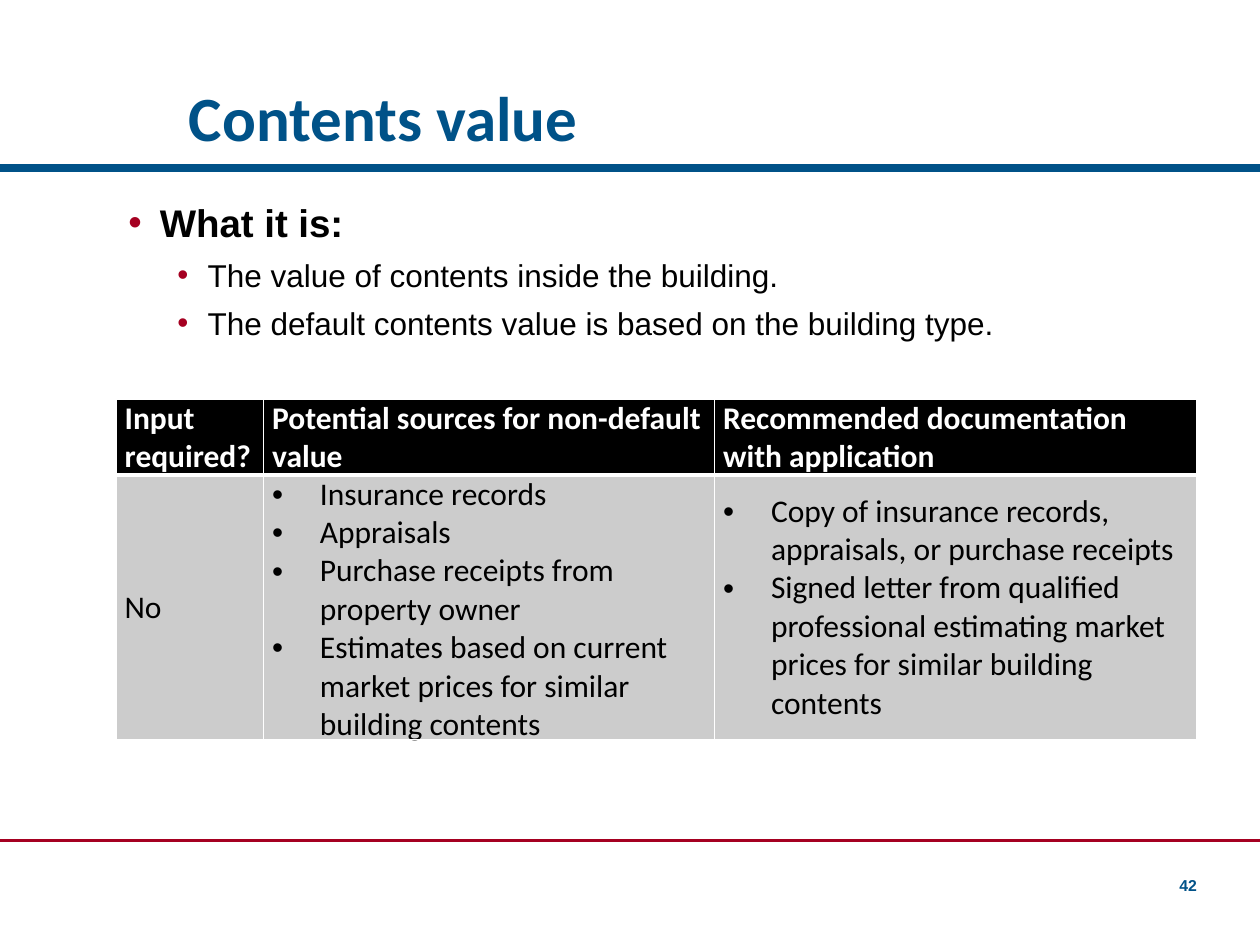
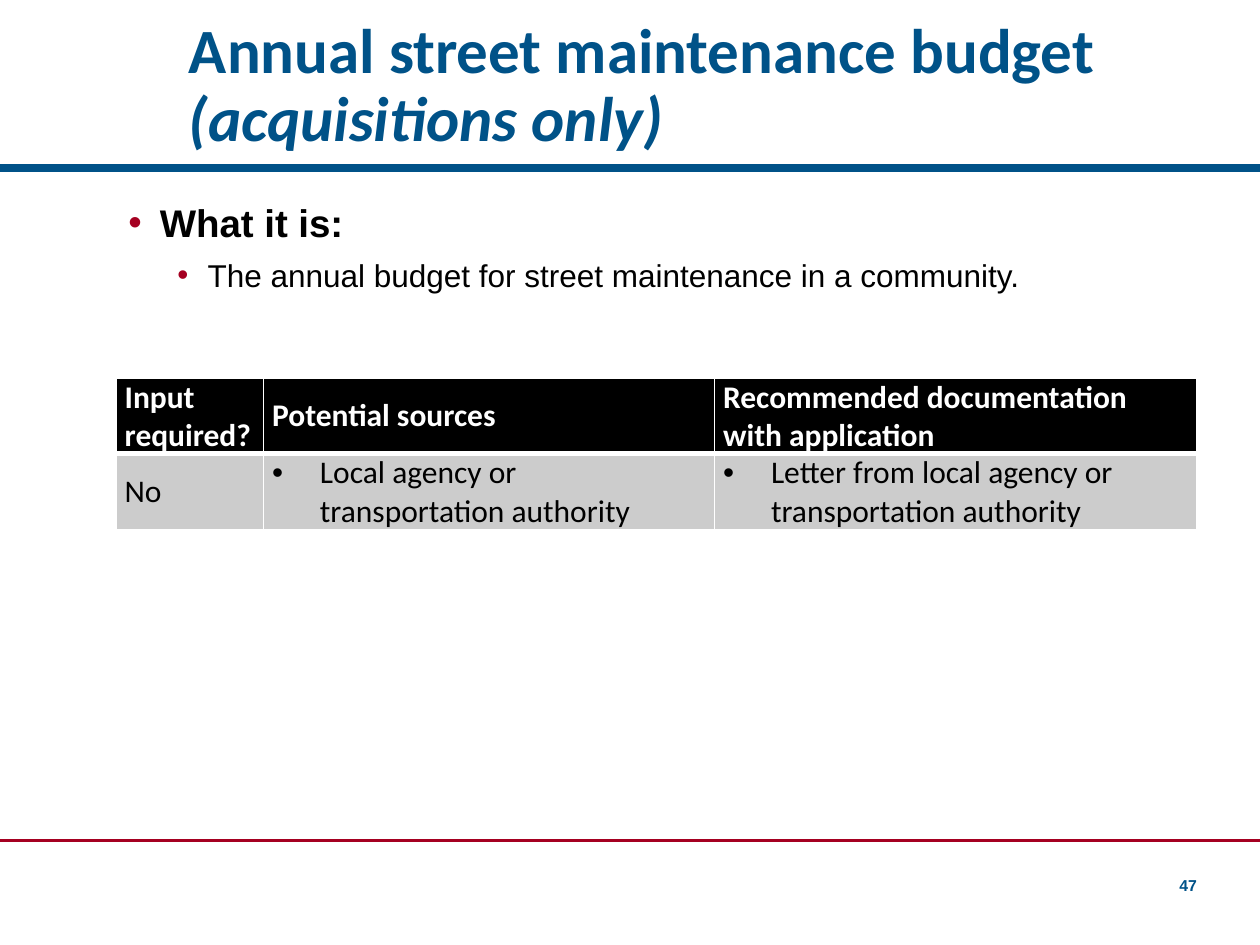
"""Builds two slides on input values: contents value and street maintenance budget."""
from dataclasses import dataclass, field
from typing import Any, Optional

from lxml import etree
from pptx import Presentation
from pptx import util as u
from pptx.dml.color import RGBColor
from pptx.enum import shapes, text
from pptx.oxml.ns import qn

EMU_PER_PX = 9144


@dataclass(frozen=True)
class Theme:
    """Colours and type formats shared by the slides."""

    blue: str = "005288"
    red: str = "A50021"
    black: str = "000000"
    white: str = "FFFFFF"
    grey: str = "CCCCCC"
    title: dict = field(default_factory=lambda: dict(name="Calibri", size=u.Pt(36), bold=True))
    topic: dict = field(default_factory=lambda: dict(name="Arial", size=u.Pt(22), bold=True))
    point: dict = field(default_factory=lambda: dict(name="Arial", size=u.Pt(18), bold=False))
    header: dict = field(default_factory=lambda: dict(name="Calibri", size=u.Pt(18), bold=True))
    entry: dict = field(default_factory=lambda: dict(name="Calibri", size=u.Pt(18), bold=False))
    number: dict = field(default_factory=lambda: dict(name="Arial", size=u.Pt(9), bold=True))


@dataclass(frozen=True)
class Rule:
    """A full-width line across the slide."""

    top: int
    colour: str
    weight: float


@dataclass(frozen=True)
class Bullet:
    """Indents in px and an optional colour for a bulleted paragraph."""

    left: int
    hang: int
    colour: Optional[str] = None


@dataclass(frozen=True)
class Topic:
    """The content of one slide."""

    title: str
    qualifier: str
    points: list[str]
    table_top: int
    answer_height: int
    sources_heading: str
    sources: list[str]
    documents: list[str]
    number: str


THEME = Theme()
RULES = [Rule(133, THEME.blue, 4.5), Rule(667, THEME.red, 1.5)]
TOPIC_BULLET = Bullet(25, 25, THEME.red)
POINT_BULLET = Bullet(63, 24, THEME.red)
ENTRY_BULLET = Bullet(38, 38)
COLUMN_WIDTHS = [117, 358, 383]
HEADER_HEIGHT = 60
LEFT, CONTENT_WIDTH = 92, 858

TOPICS = [
    Topic(
        title="Contents value",
        qualifier="",
        points=[
            "The value of contents inside the building.",
            "The default contents value is based on the building type.",
        ],
        table_top=317,
        answer_height=210,
        sources_heading="Potential sources for non-default value",
        sources=[
            "Insurance records",
            "Appraisals",
            "Purchase receipts from property owner",
            "Estimates based on current market prices for similar building contents",
        ],
        documents=[
            "Copy of insurance records, appraisals, or purchase receipts",
            "Signed letter from qualified professional estimating market prices "
            "for similar building contents",
        ],
        number="42",
    ),
    Topic(
        title="Annual street maintenance budget ",
        qualifier="(acquisitions only)",
        points=["The annual budget for street maintenance in a community."],
        table_top=300,
        answer_height=60,
        sources_heading="Potential sources",
        sources=["Local agency or transportation authority"],
        documents=["Letter from local agency or transportation authority"],
        number="47",
    ),
]


def px(length: int) -> u.Emu:
    """Turn px into EMU."""
    return u.Emu(length * EMU_PER_PX)


def apply(target: Any, values: dict) -> None:
    """Set each named attribute on the target."""
    for name, value in values.items():
        setattr(target, name, value)


def add_run(paragraph: Any, wording: str, style: dict, colour: str, italic: bool = False) -> None:
    """Add formatted wording to a paragraph."""
    run = paragraph.add_run()
    run.text = wording
    apply(run.font, style | {"italic": italic})
    run.font.color.rgb = RGBColor.from_string(colour)


def set_bullet(paragraph: Any, bullet: Bullet) -> None:
    """Give a paragraph a hanging bullet."""
    properties = paragraph._p.get_or_add_pPr()
    properties.set("marL", str(px(bullet.left)))
    properties.set("indent", str(-px(bullet.hang)))
    if bullet.colour:
        holder = etree.SubElement(properties, qn("a:buClr"))
        etree.SubElement(holder, qn("a:srgbClr"), val=bullet.colour)
    etree.SubElement(properties, qn("a:buFont"), typeface="Arial")
    etree.SubElement(properties, qn("a:buChar"), char="•")


def add_frame(slide: Any, box: tuple[int, ...], insets: tuple[int, ...], anchor: Any) -> Any:
    """Add a wrapped text box and return its text frame."""
    frame = slide.shapes.add_textbox(*map(px, box)).text_frame
    sides = ("margin_left", "margin_top", "margin_right", "margin_bottom")
    apply(frame, dict(zip(sides, map(px, insets))))
    apply(frame, {"word_wrap": True, "vertical_anchor": anchor})
    return frame


def add_rule(slide: Any, rule: Rule) -> None:
    """Draw one full-width line."""
    line = slide.shapes.add_connector(
        shapes.MSO_CONNECTOR.STRAIGHT, 0, px(rule.top), px(1000), px(rule.top)
    )
    line.line.color.rgb = RGBColor.from_string(rule.colour)
    line.line.width = u.Pt(rule.weight)
    etree.SubElement(line._element.spPr, qn("a:effectLst"))


def add_title(slide: Any, topic: Topic) -> None:
    """Write the slide title with its italic qualifier."""
    frame = add_frame(slide, (150, 0, 800, 128), (0, 5, 10, 5), text.MSO_ANCHOR.BOTTOM)
    heading = frame.paragraphs[0]
    heading.line_spacing = 0.9
    add_run(heading, topic.title, THEME.title, THEME.blue)
    if topic.qualifier:
        add_run(heading, topic.qualifier, THEME.title, THEME.blue, italic=True)


def add_definition(slide: Any, points: list[str]) -> None:
    """Write the explanation of the input value."""
    frame = add_frame(slide, (LEFT, 150, CONTENT_WIDTH, 475), (10, 8, 10, 5), text.MSO_ANCHOR.TOP)
    lead = frame.paragraphs[0]
    set_bullet(lead, TOPIC_BULLET)
    add_run(lead, "What it is:", THEME.topic, THEME.black)
    for point in points:
        paragraph = frame.add_paragraph()
        paragraph.level = 1
        set_bullet(paragraph, POINT_BULLET)
        paragraph.space_before = u.Pt(6)
        add_run(paragraph, point, THEME.point, THEME.black)


def set_borders(cell: Any, bottom: int) -> None:
    """Outline a cell in white with the given bottom weight."""
    properties = cell._tc.get_or_add_tcPr()
    for side, weight in {"L": 1, "R": 1, "T": 1, "B": bottom}.items():
        line = etree.SubElement(properties, qn(f"a:ln{side}"), w=str(u.Pt(weight)))
        fill = etree.SubElement(line, qn("a:solidFill"))
        etree.SubElement(fill, qn("a:srgbClr"), val=THEME.white)


def fill_cell(cell: Any, entries: list[str], is_header: bool, bulleted: bool) -> None:
    """Format one cell and write its entries."""
    set_borders(cell, 3 if is_header else 1)
    cell.fill.solid()
    cell.fill.fore_color.rgb = RGBColor.from_string(THEME.black if is_header else THEME.grey)
    margins = {"margin_left": px(7), "margin_right": px(7), "margin_top": 0, "margin_bottom": 0}
    apply(cell, margins | {"vertical_anchor": text.MSO_ANCHOR.MIDDLE})
    style = THEME.header if is_header else THEME.entry
    colour = THEME.white if is_header else THEME.black
    for index, entry in enumerate(entries):
        frame = cell.text_frame
        paragraph = frame.add_paragraph() if index else frame.paragraphs[0]
        if bulleted:
            set_bullet(paragraph, ENTRY_BULLET)
        add_run(paragraph, entry, style, colour)


def add_requirements(slide: Any, topic: Topic) -> None:
    """Draw the table of input, sources and documentation."""
    headings = ["Input required?", topic.sources_heading,
                "Recommended documentation with application"]
    rows = [[[heading] for heading in headings], [["No"], topic.sources, topic.documents]]
    heights = [HEADER_HEIGHT, topic.answer_height]
    table = slide.shapes.add_table(
        len(rows), len(headings), px(LEFT), px(topic.table_top),
        px(CONTENT_WIDTH), px(sum(heights)),
    ).table
    table.horz_banding = False
    for column, width in zip(table.columns, COLUMN_WIDTHS):
        column.width = px(width)
    for row_index, (row, height) in enumerate(zip(rows, heights)):
        table.rows[row_index].height = px(height)
        for column_index, entries in enumerate(row):
            fill_cell(table.cell(row_index, column_index), entries,
                      is_header=row_index == 0, bulleted=row_index > 0 and column_index > 0)


def add_page_number(slide: Any, number: str) -> None:
    """Write the page number at the lower right."""
    frame = add_frame(slide, (917, 690, 33, 25), (0, 5, 0, 5), text.MSO_ANCHOR.BOTTOM)
    frame.paragraphs[0].alignment = text.PP_ALIGN.RIGHT
    add_run(frame.paragraphs[0], number, THEME.number, THEME.blue)


def main() -> None:
    """Build and save the presentation."""
    deck = Presentation()
    apply(deck, {"slide_width": px(1000), "slide_height": px(750)})
    for topic in TOPICS:
        slide = deck.slides.add_slide(deck.slide_layouts[6])
        for rule in RULES:
            add_rule(slide, rule)
        add_title(slide, topic)
        add_definition(slide, topic.points)
        add_requirements(slide, topic)
        add_page_number(slide, topic.number)
    deck.save("out.pptx")


if __name__ == "__main__":
    main()
